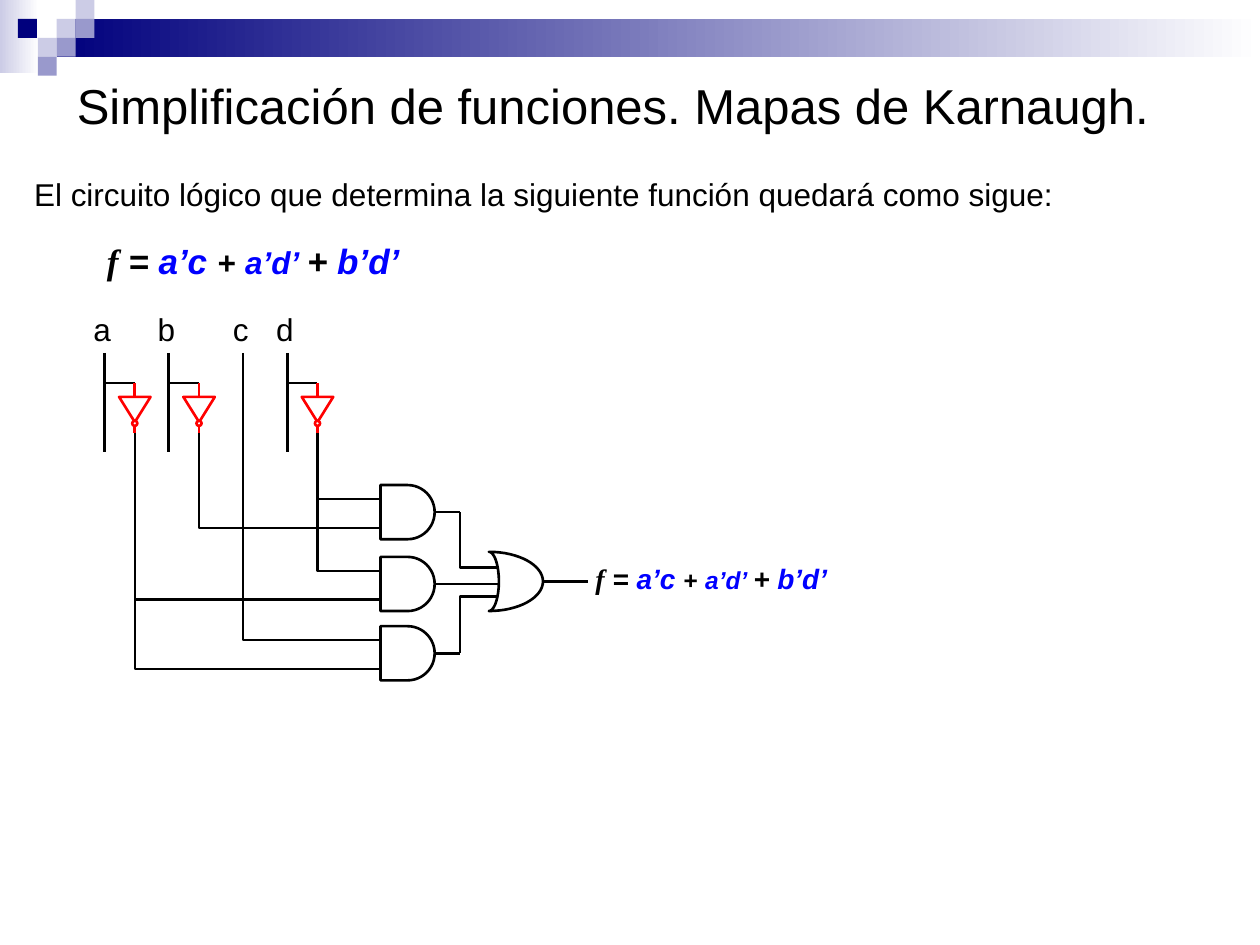
from lxml.etree import SubElement
from pptx import Presentation
from pptx.dml.color import RGBColor
from pptx.enum.shapes import MSO_CONNECTOR, MSO_SHAPE
from pptx.enum.text import MSO_ANCHOR, PP_ALIGN
from pptx.oxml.ns import qn
from pptx.util import Inches, Pt

BLACK, WHITE, RED, BLUE = "000000", "FFFFFF", "FF0000", "0000FF"
NAVY, LILAC, VIOLET = "00007D", "CCCCE6", "9999CC"
LINE_WIDTH = 1.5


def color(hex_code):
    return RGBColor.from_string(hex_code)


def set_outline(line, hex_code):
    line.color.rgb = color(hex_code)
    line.width = Pt(LINE_WIDTH)


def add_box(shapes, kind, box, fill=WHITE, outline=None):
    """Preset shape; a pair of fill colours gives a left-to-right gradient."""
    shape = shapes.add_shape(kind, *map(Inches, box))
    shape.shadow.inherit = False
    if isinstance(fill, tuple):
        shape.fill.gradient()
        shape.fill.gradient_angle = 0
        for stop, shade in zip(shape.fill.gradient_stops, fill):
            stop.color.rgb = color(shade)
    else:
        shape.fill.solid()
        shape.fill.fore_color.rgb = color(fill)
    if outline:
        set_outline(shape.line, outline)
    else:
        shape.line.fill.background()
    return shape


def add_line(shapes, start, end, hex_code=BLACK):
    line = shapes.add_connector(MSO_CONNECTOR.STRAIGHT, *map(Inches, start + end))
    set_outline(line.line, hex_code)
    SubElement(line._element.spPr, qn("a:effectLst"))


def add_path(shapes, points, closed=False):
    """Open wire, or closed white outline, through the points."""
    start, *rest = [tuple(map(Inches, point)) for point in points]
    builder = shapes.build_freeform(*start)
    builder.add_line_segments(rest, close=closed)
    path = builder.convert_to_shape()
    path.shadow.inherit = False
    if closed:
        path.fill.solid()
        path.fill.fore_color.rgb = color(WHITE)
    else:
        path.fill.background()
    set_outline(path.line, BLACK)


def add_text(shapes, box, text, size, align, inset=0.0, wrap=True):
    frame = shapes.add_textbox(*map(Inches, box)).text_frame
    frame.word_wrap = wrap
    frame.margin_left = frame.margin_right = Inches(inset)
    frame.margin_top = frame.margin_bottom = Inches(inset)
    paragraph = frame.paragraphs[0]
    paragraph.text = text
    paragraph.alignment = align
    paragraph.font.size = Pt(size)
    paragraph.font.name = "Arial"
    paragraph.font.color.rgb = color(BLACK)
    return paragraph


def add_formula(shapes, box, size, inset=0.0, wrap=True):
    paragraph = add_text(shapes, box, "", size, PP_ALIGN.CENTER, inset, wrap)
    paragraph.font.bold = paragraph.font.italic = True
    small = size - 2
    for text, run_size, shade in (
        ("f", size, BLACK), (" = ", size, BLACK), ("a’c ", size, BLUE),
        ("+", small, BLACK), (" ", size, BLACK), ("a’d’ ", small, BLUE),
        ("+ ", size, BLACK), ("b’d’", size, BLUE),
    ):
        run = paragraph.add_run()
        run.text = text
        run.font.size = Pt(run_size)
        run.font.color.rgb = color(shade)
    paragraph.runs[0].font.name = "Times New Roman"


def add_header(shapes, width, cell):
    """Gradient band and checkered corner on a grid of square cells."""
    add_box(shapes, MSO_SHAPE.RECTANGLE, (0, 0, 0.31, 0.58), (LILAC, WHITE))
    add_box(shapes, MSO_SHAPE.RECTANGLE,
            (3 * cell, cell, width - 3 * cell, 2 * cell), (NAVY, WHITE))
    for column, row, shade in (
        (3, 1, LILAC), (4, 0, LILAC), (4, 1, VIOLET), (2, 2, LILAC),
        (0.95, 1, NAVY), (3, 2, VIOLET), (2, 3, VIOLET),
    ):
        add_box(shapes, MSO_SHAPE.RECTANGLE,
                (column * cell, row * cell, cell, cell), shade)


def add_title(title, box, text):
    title.left, title.top, title.width, title.height = map(Inches, box)
    frame = title.text_frame
    frame.text = text
    frame.vertical_anchor = MSO_ANCHOR.MIDDLE
    paragraph = frame.paragraphs[0]
    paragraph.alignment = PP_ALIGN.LEFT
    paragraph.font.size = Pt(28)
    paragraph.font.name = "Arial"
    paragraph.font.color.rgb = color(BLACK)


def add_inverter(shapes, x, y):
    """NOT gate hanging from (x, y)."""
    add_line(shapes, (x, y), (x, y + 0.4), RED)
    triangle = add_box(shapes, MSO_SHAPE.ISOSCELES_TRIANGLE,
                       (x - 0.125, y + 0.11, 0.25, 0.2), WHITE, RED)
    triangle.rotation = 180
    add_box(shapes, MSO_SHAPE.OVAL, (x - 0.02, y + 0.3, 0.04, 0.04), WHITE, RED)


def add_and_gate(shapes, x, y, size, lead):
    """AND gate with top left corner (x, y) and an output lead."""
    middle = y + size / 2
    add_line(shapes, (x + size / 2, middle), (x + size + lead, middle))
    add_box(shapes, MSO_SHAPE.FLOWCHART_DELAY, (x, y, size, size), WHITE, BLACK)


def quarter_curve(start, end, steps=16):
    """Points of a quarter ellipse leaving start horizontally."""
    (x0, y0), (x1, y1) = start, end
    controls = (start, (x0 + 0.55 * (x1 - x0), y0), (x1, y0 + 0.45 * (y1 - y0)), end)
    curve = []
    for step in range(steps + 1):
        t = step / steps
        weights = ((1 - t) ** 3, 3 * t * (1 - t) ** 2, 3 * t * t * (1 - t), t ** 3)
        curve.append(tuple(sum(w * c[axis] for w, c in zip(weights, controls))
                           for axis in (0, 1)))
    return curve


def add_or_gate(shapes, x, y, width, height):
    top, bottom, middle = (x, y), (x, y + height), y + height / 2
    tip, back = (x + width, middle), (x + 0.08, middle)
    add_line(shapes, (x + width - 0.03, middle), (x + width + 0.36, middle))
    add_path(shapes, quarter_curve(top, tip) + quarter_curve(bottom, tip)[::-1]
             + quarter_curve(bottom, back) + quarter_curve(top, back)[::-1], True)


def add_circuit(shapes, left, top):
    stem_top, tap, stem_end = top + 0.39, top + 0.63, top + 1.18
    inputs = {"a": left, "b": left + 0.51, "c": left + 1.1, "d": left + 1.45}
    inverted = {name: x + 0.24 for name, x in inputs.items() if name != "c"}
    for name, x in inputs.items():
        add_text(shapes, (x - 0.19, top, 0.34, 0.4), name, 18,
                 PP_ALIGN.CENTER, 0.05, False)
    for name, x in inverted.items():
        stem = inputs[name]
        add_line(shapes, (stem, stem_top), (stem, stem_end))
        add_line(shapes, (stem, tap), (x, tap))
        add_inverter(shapes, x, tap)

    gate_left, gate_size, lead = left + 2.19, 0.43, 0.2
    gate_tops = [top + 1.44, top + 2.01, top + 2.56]
    sources = {**inverted, "c": inputs["c"]}
    for gate_top, names in zip(gate_tops, ("db", "da", "ca")):
        for name, drop in zip(names, (0.11, 0.34)):
            start = stem_top if name == "c" else tap + 0.4
            x, y = sources[name], gate_top + drop
            add_path(shapes, [(x, start), (x, y), (gate_left, y)])
        add_and_gate(shapes, gate_left, gate_top, gate_size, lead)

    or_left, or_top, or_height = left + 3.05, top + 1.97, 0.47
    or_middle = or_top + or_height / 2
    add_or_gate(shapes, or_left, or_top, 0.43, or_height)
    lead_end = gate_left + gate_size + lead
    for gate_top, offset in zip(gate_tops, (-0.11, 0.02, 0.12)):
        y = or_middle + offset
        add_path(shapes, [(lead_end, gate_top + gate_size / 2),
                          (lead_end, y), (or_left + 0.07, y)])
    add_formula(shapes, (or_left + 0.84, or_middle - 0.155, 1.85, 0.27), 16, wrap=False)


def main():
    deck = Presentation()
    deck.slide_width, deck.slide_height = Inches(10), Inches(7.5)
    slide = deck.slides.add_slide(deck.slide_layouts[5])
    shapes = slide.shapes
    add_header(shapes, 10, 0.15)
    add_title(shapes.title, (0.51, 0.52, 9, 0.63),
              "Simplificación de funciones. Mapas de Karnaugh.")
    add_text(shapes, (0.27, 1.39, 9.45, 0.32),
             "El circuito lógico que determina la siguiente función quedará como sigue:",
             18, PP_ALIGN.JUSTIFY)
    add_formula(shapes, (0.59, 1.78, 2.84, 0.55), 20, 0.12)
    add_circuit(shapes, 0.83, 2.41)
    deck.save("out.pptx")


if __name__ == "__main__":
    main()
